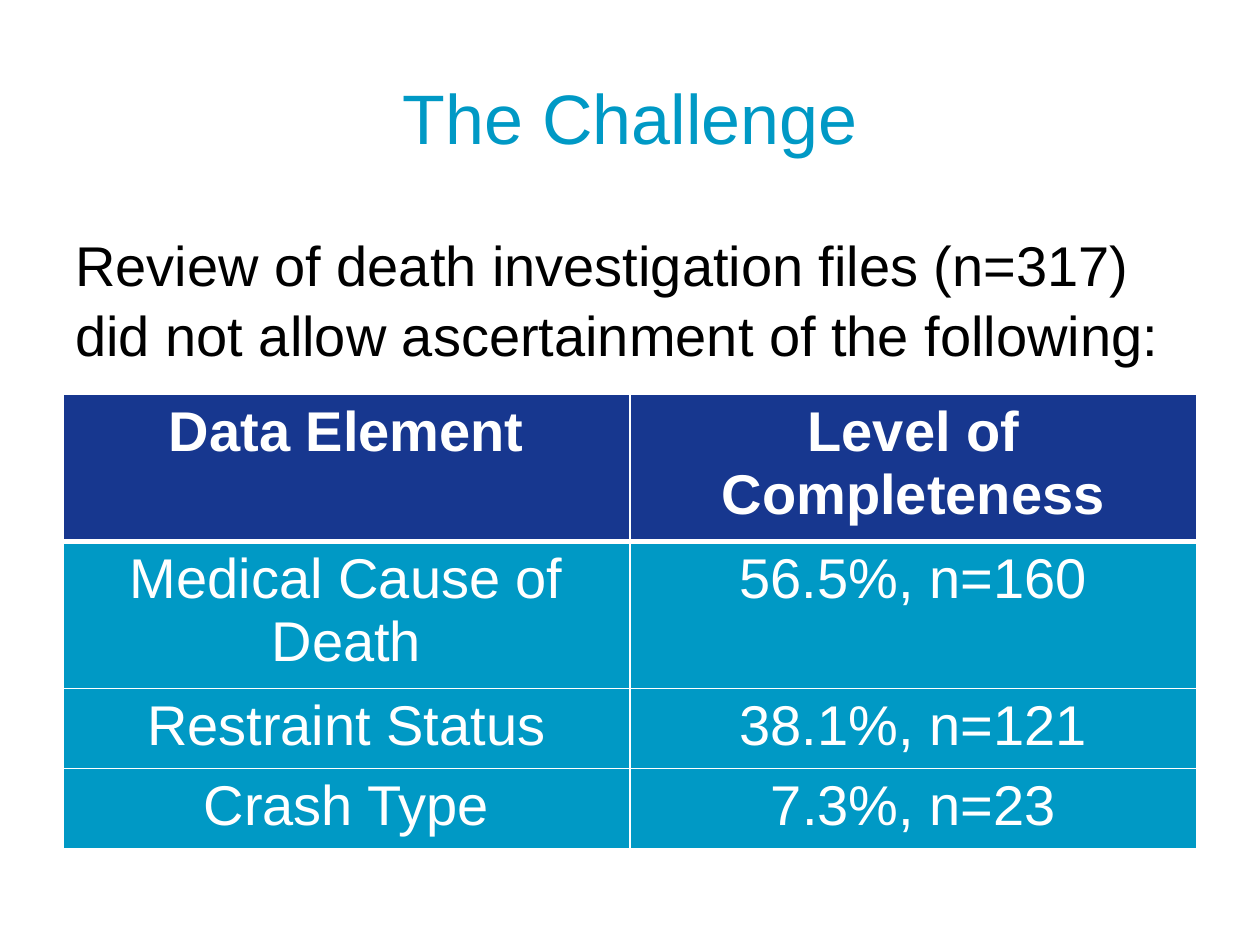
from pptx import Presentation
from pptx.dml.color import RGBColor
from pptx.enum.text import MSO_ANCHOR as Anchor, PP_ALIGN as Align
from pptx.oxml import parse_xml
from pptx.oxml.ns import nsdecls
from pptx.util import Inches, Pt

TITLE = "The Challenge"
INTRO = ("Review of death investigation files (n=317) did not allow "
         "ascertainment of the following:")
ROWS = [
    ("Data Element", "Level of Completeness"),
    ("Medical Cause of Death", "56.5%, n=160"),
    ("Restraint Status", "38.1%, n=121"),
    ("Crash Type", "7.3%, n=23"),
]

NAVY = RGBColor(0x17, 0x37, 0x8F)
TEAL = RGBColor(0x00, 0x99, 0xC5)
BLACK = RGBColor(0, 0, 0)
WHITE = RGBColor(255, 255, 255)
LEFT, WIDTH, ROW = 0.5, 9, 0.41


def write(frame, text, size=32, color=WHITE, bold=False, align=Align.CENTER,
          space=None):
    frame.word_wrap = True
    para = frame.paragraphs[0]
    para.alignment = align
    para.line_spacing = space
    run = para.add_run()
    run.text = text
    font = run.font
    font.name, font.size, font.bold = "Arial", Pt(size), bold
    font.color.rgb = color


def add_box(slide, top, height):
    box = slide.shapes.add_textbox(
        Inches(LEFT), Inches(top), Inches(WIDTH), Inches(height))
    return box.text_frame


def edge(cell, sides):
    props = cell._tc.get_or_add_tcPr()
    for spot, (side, width) in enumerate(sides.items()):
        line = parse_xml(
            f'<a:ln{side} {nsdecls("a")} w="{Pt(width)}"><a:solidFill>'
            f'<a:srgbClr val="{WHITE}"/></a:solidFill></a:ln{side}>')
        props.insert(spot, line)


def add_grid(slide, top):
    count, cols = len(ROWS), len(ROWS[0])
    table = slide.shapes.add_table(
        count, cols, Inches(LEFT), Inches(top),
        Inches(WIDTH), Inches(ROW * count)).table
    for i, row in enumerate(ROWS):
        head = i == 0
        for j, text in enumerate(row):
            cell = table.cell(i, j)
            cell.fill.solid()
            cell.fill.fore_color.rgb = NAVY if head else TEAL
            write(cell.text_frame, text, bold=head)
            edge(cell, {"L": 1, "R": 1, "T": 3 if i == 1 else 1,
                        "B": 3 if head else 1})


def main():
    deck = Presentation()
    deck.slide_width, deck.slide_height = Inches(10), Inches(7.5)
    slide = deck.slides.add_slide(deck.slide_layouts[6])
    title = add_box(slide, 0.3, 1.25)
    title.vertical_anchor = Anchor.MIDDLE
    write(title, TITLE, size=40, color=TEAL)
    add_grid(slide, 3.13)
    intro = add_box(slide, 1.75, 1.18)
    write(intro, INTRO, color=BLACK, align=Align.LEFT, space=1.05)
    deck.save("out.pptx")


if __name__ == "__main__":
    main()
